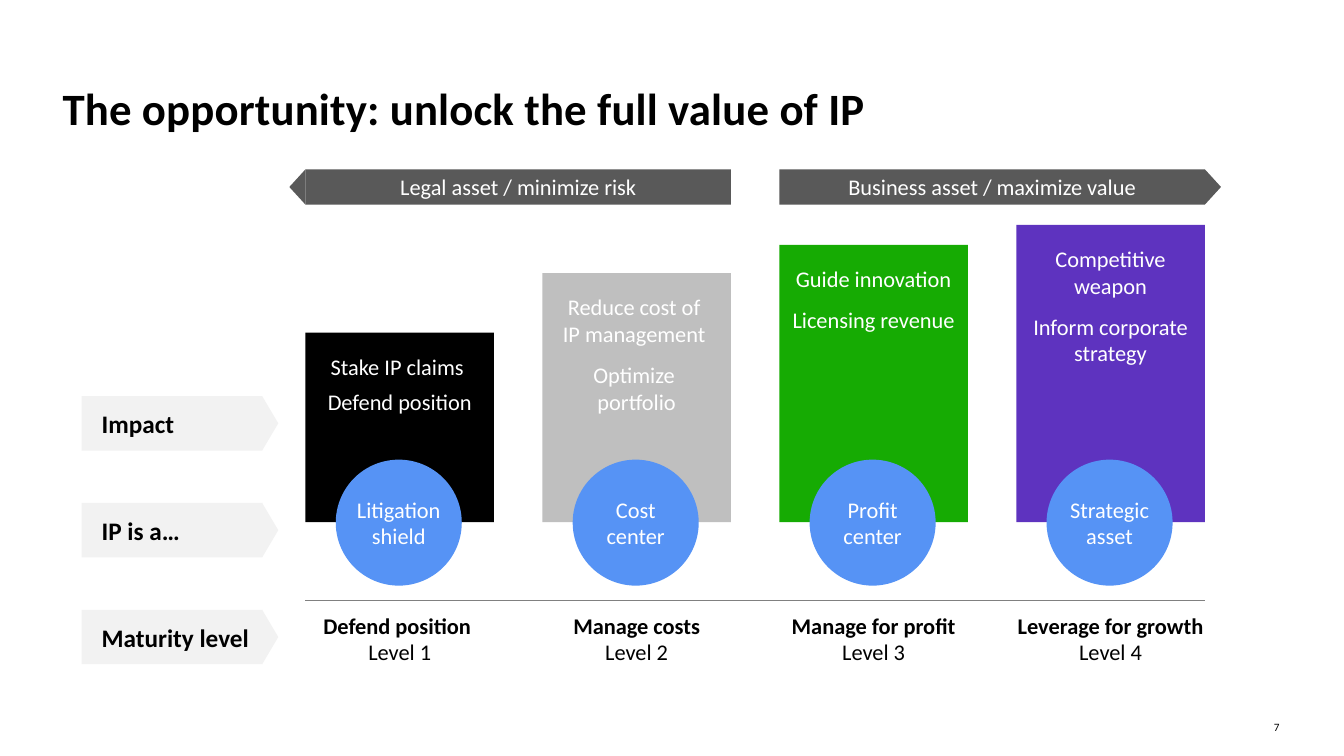
from copy import deepcopy
from dataclasses import dataclass

from pptx import Presentation
from pptx import util as u
from pptx.dml import color
from pptx.enum import shapes as kinds, text as t
from pptx.oxml import ns, xmlchemy
from pptx.shapes import autoshape, shapetree
from pptx.text import text as txt

COLORS = {
    "white": "FFFFFF", "black": "000000", "gray": "BFBFBF", "green": "16AB03",
    "purple": "5E33BF", "blue": "5693F5", "tag": "F2F2F2", "banner": "595959",
    "rule": "808080",
}
FIRST_LEFT, PITCH, COLUMN_WIDTH, BAR_BOTTOM = 3.03, 2.35, 1.87, 5.18
BANNER_WIDTH = PITCH + COLUMN_WIDTH
TAG_TOP, TAG_PITCH = 3.93, 1.06
POINT_DEPTH = 0.16


@dataclass(frozen=True)
class Box:
    left: float
    top: float
    width: float
    height: float

    def emu(self) -> list[u.Inches]:
        return [u.Inches(v) for v in (self.left, self.top, self.width, self.height)]


@dataclass(frozen=True)
class Style:
    size: float = 16
    color: str = "white"
    bold: bool = False
    align: t.PP_ALIGN = t.PP_ALIGN.CENTER
    anchor: t.MSO_ANCHOR = t.MSO_ANCHOR.MIDDLE
    insets: tuple[float, float, float, float] = (0, 0, 0, 0)
    gap: float = 0


@dataclass(frozen=True)
class Level:
    top: float
    fill: str
    impact: list[str]
    role: str
    maturity: str
    gap: float = 10


@dataclass(frozen=True)
class Banner:
    column: int
    direction: int
    caption: str


LEVELS = [
    Level(3.30, "black", ["Stake IP claims ", "Defend position"],
          "Litigation shield", "Defend position ", gap=6),
    Level(2.71, "gray", ["Reduce cost of \vIP management ", "Optimize \vportfolio"],
          "Cost center", "Manage costs"),
    Level(2.43, "green", ["Guide innovation", "Licensing revenue"],
          "Profit center", "Manage for profit"),
    Level(2.23, "purple", ["Competitive weapon", "Inform corporate strategy"],
          "Strategic asset", "Leverage for growth"),
]
BANNERS = [
    Banner(0, -1, "Legal asset / minimize risk"),
    Banner(2, 1, "Business asset / maximize value"),
]
TAGS = ["Impact", "IP is a…", "Maturity level"]

BAR_INSETS = (0.1, 0.2, 0.1, 0.05)
TAG_STYLE = Style(18, "black", True, t.PP_ALIGN.LEFT, t.MSO_ANCHOR.TOP,
                  (0.1, 0.05, 0, 0.05))
MATURITY_STYLE = Style(color="black", anchor=t.MSO_ANCHOR.TOP,
                       insets=(0, 0.05, 0, 0.05))
TITLE_STYLE = Style(32, "black", True, t.PP_ALIGN.LEFT)
NUMBER_STYLE = Style(8, "black", align=t.PP_ALIGN.RIGHT, anchor=t.MSO_ANCHOR.TOP)


def rgb(name: str) -> color.RGBColor:
    return color.RGBColor.from_string(COLORS[name])


def write(frame: txt.TextFrame, lines: list[str], style: Style) -> None:
    """Fill the frame with one paragraph a line; \\v breaks a line."""
    left, top, right, bottom = (u.Inches(v) for v in style.insets)
    frame_format = {
        "margin_left": left, "margin_top": top,
        "margin_right": right, "margin_bottom": bottom,
        "word_wrap": True, "auto_size": t.MSO_AUTO_SIZE.NONE,
        "vertical_anchor": style.anchor,
    }
    for name, value in frame_format.items():
        setattr(frame, name, value)
    font_format = {"name": "Calibri", "size": u.Pt(style.size), "bold": style.bold}
    frame.text = "\n".join(lines)
    for index, paragraph in enumerate(frame.paragraphs):
        paragraph.alignment = style.align
        if index and style.gap:
            paragraph.space_before = u.Pt(style.gap)
        for run in paragraph.runs:
            for name, value in font_format.items():
                setattr(run.font, name, value)
            run.font.color.rgb = rgb(style.color)
        for line_break in paragraph._p.findall(ns.qn("a:br")):
            line_break.append(deepcopy(paragraph.runs[0]._r.rPr))


def add_block(shapes: shapetree._BaseGroupShapes, kind: kinds.MSO_SHAPE,
              box: Box, fill: str) -> autoshape.Shape:
    block = shapes.add_shape(kind, *box.emu())
    block.shadow.inherit = False
    block.fill.solid()
    block.fill.fore_color.rgb = rgb(fill)
    block.line.fill.background()
    return block


def add_text(shapes: shapetree._BaseGroupShapes, box: Box, lines: list[str],
             style: Style) -> txt.TextFrame:
    frame = shapes.add_textbox(*box.emu()).text_frame
    write(frame, lines, style)
    return frame


def add_pointer(shapes: shapetree._BaseGroupShapes, box: Box, fill: str,
                direction: int) -> autoshape.Shape:
    """Draw a bar with a point on its right (1) or left (-1) end."""
    bar = add_block(shapes, kinds.MSO_SHAPE.RECTANGLE, box, fill)
    center = box.left + box.width / 2 + direction * (box.width + POINT_DEPTH) / 2
    point_box = Box(center - box.height / 2,
                    box.top + (box.height - POINT_DEPTH) / 2,
                    box.height, POINT_DEPTH)
    point = add_block(shapes, kinds.MSO_SHAPE.ISOSCELES_TRIANGLE, point_box, fill)
    point.rotation = 90 * direction
    return bar


def add_level(shapes: shapetree.SlideShapes, index: int, level: Level) -> None:
    left = FIRST_LEFT + index * PITCH
    bar = add_block(shapes, kinds.MSO_SHAPE.RECTANGLE,
                    Box(left, level.top, COLUMN_WIDTH, BAR_BOTTOM - level.top),
                    level.fill)
    write(bar.text_frame, level.impact,
          Style(anchor=t.MSO_ANCHOR.TOP, insets=BAR_INSETS, gap=level.gap))
    circle = add_block(shapes, kinds.MSO_SHAPE.OVAL,
                       Box(left + 0.3, 4.56, 1.25, 1.25), "blue")
    write(circle.text_frame, [level.role], Style())
    maturity = add_text(shapes, Box(left, 6.02, COLUMN_WIDTH, 0.64),
                        [level.maturity, f"Level {index + 1}"], MATURITY_STYLE)
    maturity.paragraphs[0].runs[0].font.bold = True


def add_rule(shapes: shapetree.SlideShapes) -> None:
    ends = [u.Inches(v) for v in (FIRST_LEFT, 5.96, 11.95, 5.96)]
    rule = shapes.add_connector(kinds.MSO_CONNECTOR.STRAIGHT, *ends)
    rule.line.color.rgb = rgb("rule")
    rule.line.width = u.Pt(0.75)
    rule._element.spPr.append(xmlchemy.OxmlElement("a:effectLst"))


def main() -> None:
    deck = Presentation()
    deck.slide_width, deck.slide_height = u.Inches(13.33), u.Inches(7.5)
    slide = deck.slides.add_slide(deck.slide_layouts[5])
    shapes = slide.shapes

    title = shapes.title
    title.left, title.top, title.width, title.height = Box(0.62, 0.89, 11.03, 0.43).emu()
    write(title.text_frame, ["The opportunity: unlock the full value of IP"], TITLE_STYLE)
    heading = title.text_frame.paragraphs[0]
    heading.line_spacing = 0.85
    heading.runs[0]._r.rPr.set("spc", "10")

    for index, caption in enumerate(TAGS):
        top = TAG_TOP + index * TAG_PITCH
        tag = shapes.add_group_shape().shapes
        add_pointer(tag, Box(0.81, top, 1.79, 0.54), "tag", 1)
        add_text(tag, Box(0.91, top + 0.07, 1.71, 0.4), [caption], TAG_STYLE)
    for index, level in enumerate(LEVELS):
        add_level(shapes, index, level)
    for banner in BANNERS:
        box = Box(FIRST_LEFT + banner.column * PITCH, 1.68, BANNER_WIDTH, 0.35)
        bar = add_pointer(shapes.add_group_shape().shapes, box, "banner", banner.direction)
        write(bar.text_frame, [banner.caption], Style())
    add_rule(shapes)
    add_text(shapes, Box(12.37, 7.15, 0.32, 0.18), ["7"], NUMBER_STYLE)
    deck.save("out.pptx")


if __name__ == "__main__":
    main()
